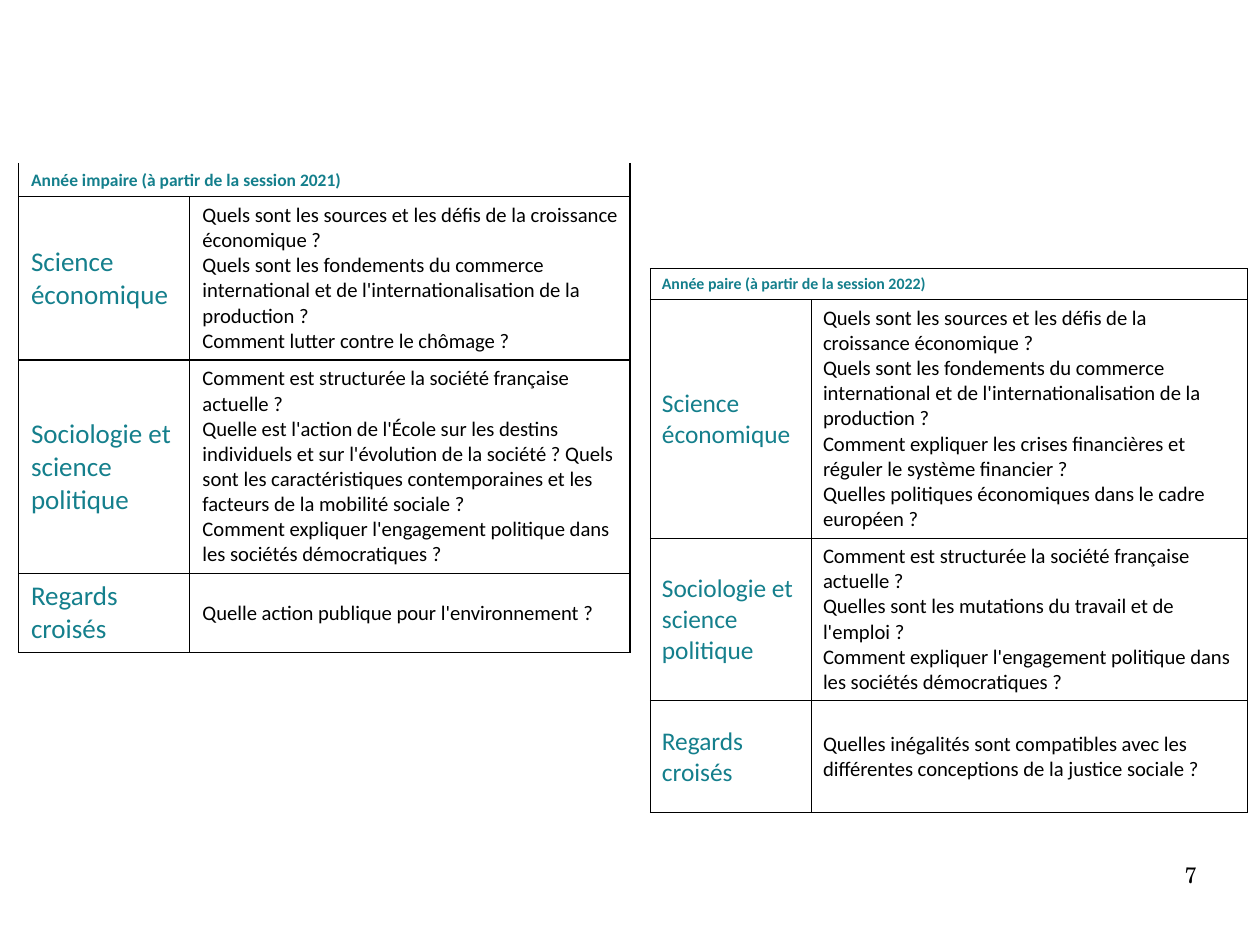
from lxml import etree
from pptx import Presentation, util as u
from pptx.dml.color import RGBColor
from pptx.enum import text
from pptx.oxml import ns

BLACK, WHITE, TEAL = "000000", "FFFFFF", "147F8C"


def add_text(tf, lines, size, color, font="Calibri", bold=False):
    for i, line in enumerate(lines):
        p = tf.add_paragraph() if i else tf.paragraphs[0]
        r = p.add_run()
        r.text = line
        r.font.size = u.Pt(size)
        r.font.name = font
        r.font.bold = bold
        r.font.color.rgb = RGBColor.from_string(color)


def add_border(cell, side, color):
    tcPr = cell._tc.get_or_add_tcPr()
    ln = etree.SubElement(tcPr, ns.qn(f"a:ln{side}"), w=str(u.Pt(0.77)))
    fill = etree.SubElement(ln, ns.qn("a:solidFill"))
    etree.SubElement(fill, ns.qn("a:srgbClr"), val=color)


prs = Presentation()
prs.slide_width, prs.slide_height = u.Cm(28), u.Cm(21)
s = prs.slides.add_slide(prs.slide_layouts[6])

themes = ["Science économique", "Sociologie et science politique", "Regards croisés"]
growth = "Quels sont les sources et les défis de la croissance économique ?"
trade = "Quels sont les fondements du commerce international et de l'internationalisation de la production ?"
society = "Comment est structurée la société française actuelle ?"
engagement = "Comment expliquer l'engagement politique dans les sociétés démocratiques ?"

years = [
    dict(title="Année impaire (à partir de la session 2021)",
         left=0.41, top=3.63, cols=[3.81, 9.78], rows=[0.74, 3.63, 4.75, 1.75],
         title_size=11, theme_size=17, margin=0.28, top_color=WHITE,
         questions=[
             [growth, trade, "Comment lutter contre le chômage ?"],
             [society,
              "Quelle est l'action de l'École sur les destins individuels et sur "
              "l'évolution de la société ? Quels sont les caractéristiques "
              "contemporaines et les facteurs de la mobilité sociale ?",
              engagement],
             ["Quelle action publique pour l'environnement ?"]]),
    dict(title="Année paire (à partir de la session 2022)",
         left=14.45, top=5.97, cols=[3.58, 9.7], rows=[0.69, 5.3, 3.61, 2.49],
         title_size=10, theme_size=16, margin=0.26, top_color=BLACK,
         questions=[
             [growth, trade,
              "Comment expliquer les crises financières et réguler le système financier ?",
              "Quelles politiques économiques dans le cadre européen ?"],
             [society,
              "Quelles sont les mutations du travail et de l'emploi ?",
              engagement],
             ["Quelles inégalités sont compatibles avec les différentes "
              "conceptions de la justice sociale ?"]]),
]

for year in years:
    cols, rows = year["cols"], year["rows"]
    table = s.shapes.add_table(len(rows), len(cols), u.Cm(year["left"]), u.Cm(year["top"]),
                               u.Cm(sum(cols)), u.Cm(sum(rows))).table
    table.first_row = table.horz_banding = False
    for col, width in zip(table.columns, cols):
        col.width = u.Cm(width)
    for row, height in zip(table.rows, rows):
        row.height = u.Cm(height)
    for i, row in enumerate(table.rows):
        for cell in row.cells:
            cell.margin_left = cell.margin_right = u.Cm(year["margin"])
            cell.margin_top = cell.margin_bottom = u.Cm(0.13)
            cell.vertical_anchor = text.MSO_ANCHOR.MIDDLE
            for side in "LRTB":
                is_top = i == 0 and side == "T"
                add_border(cell, side, year["top_color"] if is_top else BLACK)
            cell.fill.solid()
            cell.fill.fore_color.rgb = RGBColor.from_string(WHITE)
    table.cell(0, 0).merge(table.cell(0, 1))
    add_text(table.cell(0, 0).text_frame, [year["title"]], year["title_size"], TEAL, bold=True)
    for i, (theme, questions) in enumerate(zip(themes, year["questions"]), 1):
        add_text(table.cell(i, 0).text_frame, [theme], year["theme_size"], TEAL)
        add_text(table.cell(i, 1).text_frame, questions, 13, BLACK)

tf = s.shapes.add_textbox(u.Cm(20.07), u.Cm(19.13), u.Cm(6.53), u.Cm(1.45)).text_frame
tf.word_wrap = True
tf.margin_left = tf.margin_right = tf.margin_top = tf.margin_bottom = 0
add_text(tf, ["7"], 14, BLACK, font="TeX Gyre Schola")
tf.paragraphs[0].alignment = text.PP_ALIGN.RIGHT

prs.save("out.pptx")
